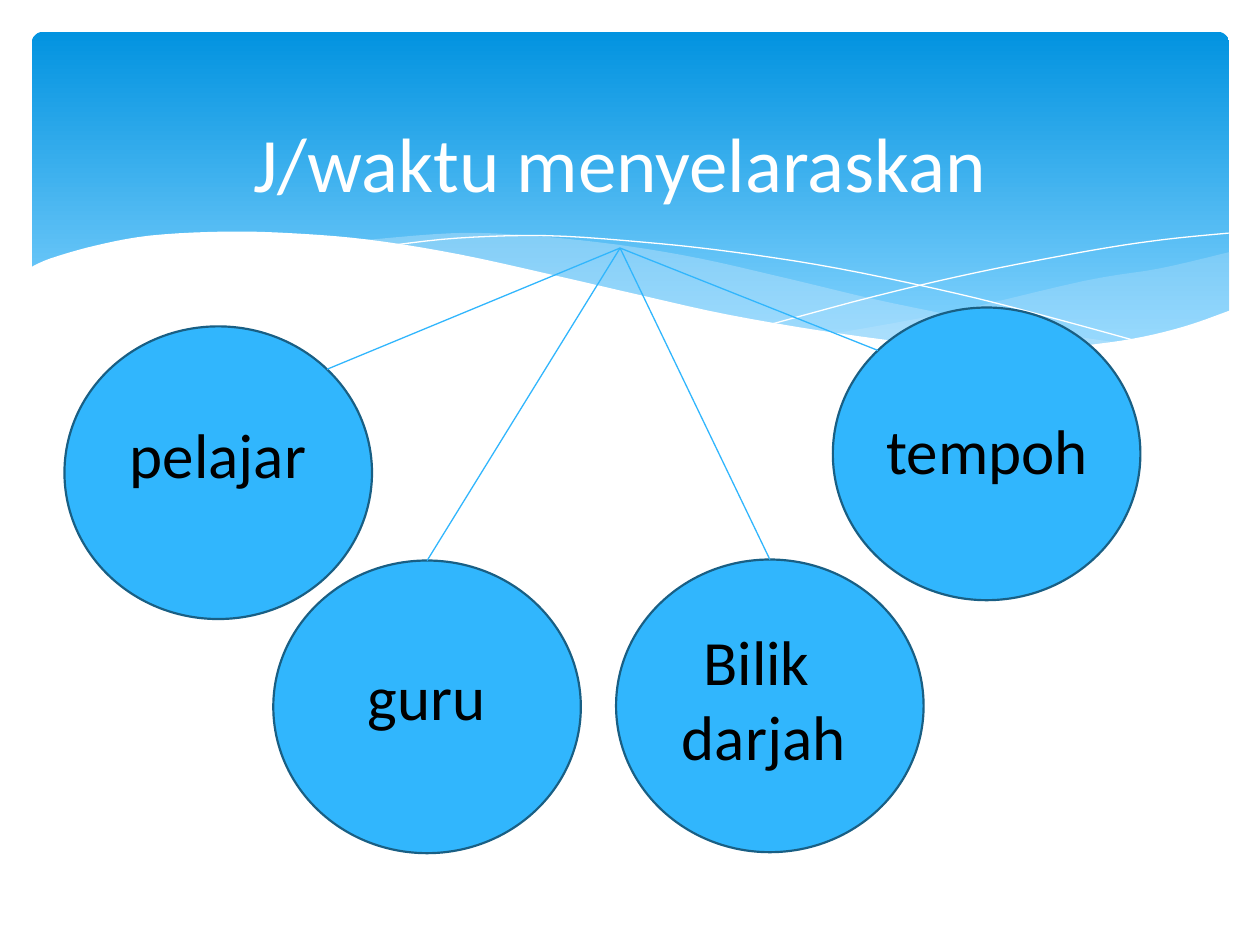
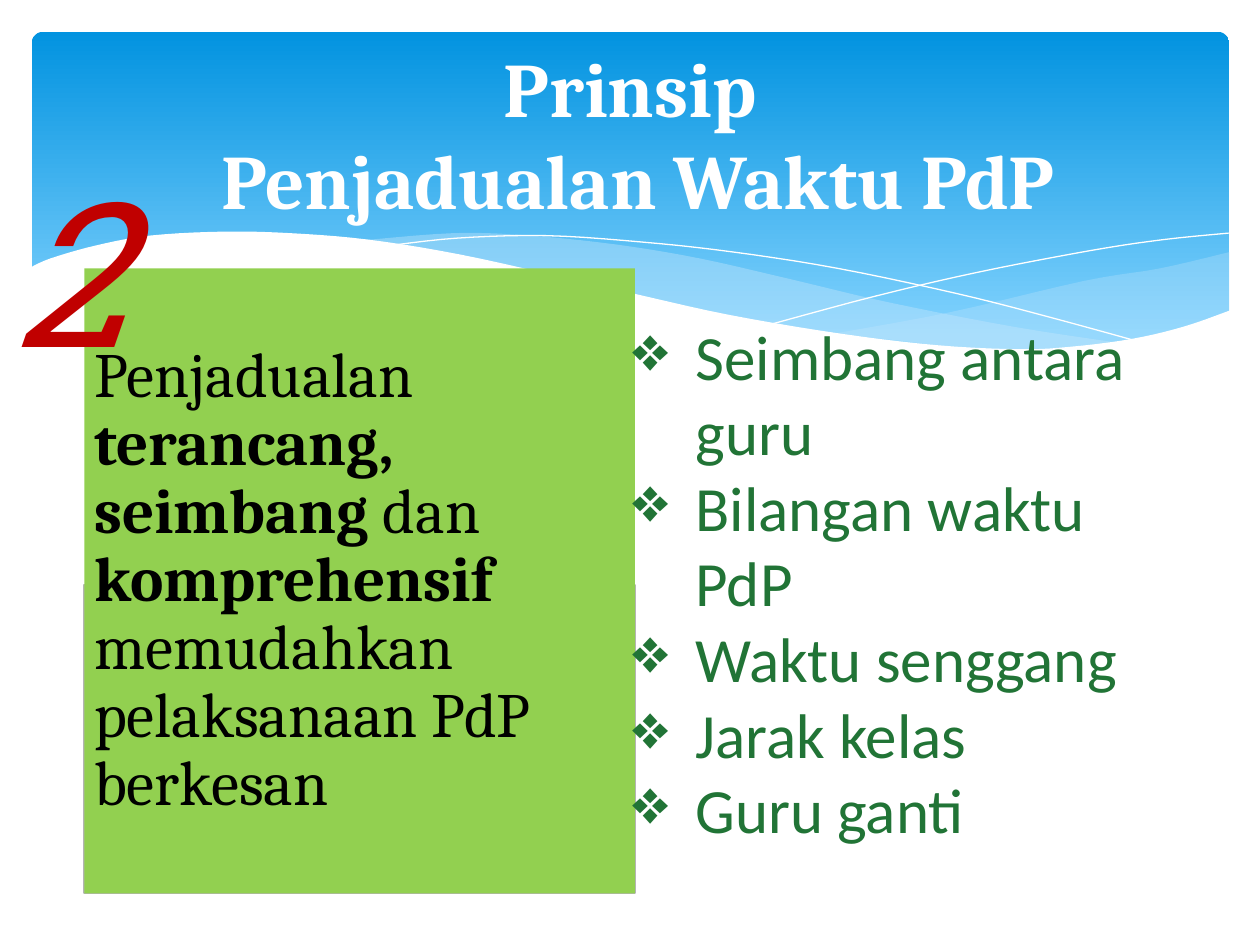
"""Build two slides on aligning and scheduling teaching time."""
import math

from lxml import etree
from pptx import Presentation
from pptx import util as u
from pptx.dml.color import RGBColor
from pptx.enum import shapes, text
from pptx.oxml.ns import qn

COLORS = {
    "white": "FFFFFF", "black": "000000", "band_top": "0293E0", "band_end": "83D3FE",
    "wave": "C6E7FC", "sky": "31B6FD", "navy": "195F84", "lime": "92D050",
    "grey": "B4B4B4", "forest": "217436", "red": "C00000",
}
BACK_WAVE_TOP = [(24.79, 5.08), (23.39, 5.41), (21.87, 5.66), (19.13, 6.3), (16.79, 6.73)]
BACK_WAVE_BASE = [(16.79, 6.73), (18.26, 6.88), (19.53, 7.04), (20.68, 7.06),
                  (21.92, 6.99), (22.99, 6.83), (23.93, 6.58), (24.79, 6.27)]
FRONT_WAVE_TOP = [(22.68, 6.93), (20.5, 6.6), (17.93, 6.1), (15.98, 5.64), (14.1, 5.21),
                  (12.42, 4.93), (10.67, 4.75), (9.17, 4.7), (7.26, 4.85)]
FRONT_WAVE_BASE = [(7.26, 4.85), (9.19, 5.16), (11.4, 5.64), (13.46, 6.1), (15.27, 6.48),
                   (16.89, 6.76), (18.69, 6.99), (20.22, 7.06), (21.54, 7.04), (22.68, 6.93)]
FALLING_LINE = [(7.85, 4.95), (9.22, 4.8), (11, 4.75), (12.95, 4.88), (14.78, 5.08),
                (16.89, 5.41), (19.3, 5.92), (21.11, 6.38), (23.04, 6.91)]
RISING_LINE = [(15.57, 6.53), (17.65, 5.97), (19.71, 5.49), (22, 5.05), (23.47, 4.83),
               (24.77, 4.7)]
WHITE_EDGE = [(24.82, 6.25), (23.88, 6.58), (22.83, 6.83), (21.59, 6.99), (20.55, 7.04),
              (18.9, 6.96), (16.97, 6.73), (14.71, 6.35), (12.78, 5.92), (11.35, 5.59),
              (9.27, 5.13), (7.42, 4.83), (5.84, 4.7), (4.5, 4.67), (3.02, 4.75),
              (1.93, 4.95), (1.02, 5.21), (0.58, 5.41)]
WHITE_BASE = [(0.58, 8.36), (24.82, 8.36)]


def rgb(name):
    """Return the named colour."""
    return RGBColor.from_string(COLORS[name])


def smooth(pts, steps=5):
    """Return a Catmull-Rom curve through the points."""
    ends = [pts[0], *pts, pts[-1]]
    curve = [pts[0]]
    for a, b, c, d in zip(ends, ends[1:], ends[2:], ends[3:]):
        for i in range(1, steps + 1):
            t = i / steps
            curve.append(tuple(
                (2 * q + (r - p) * t + (2 * p - 5 * q + 4 * r - v) * t ** 2
                 + (3 * q - p - 3 * r + v) * t ** 3) / 2
                for p, q, r, v in zip(a, b, c, d)))
    return curve


class Deck:
    """Hold the style and the current slide."""

    def __init__(self):
        """Start an empty 4:3 presentation."""
        self.prs = Presentation()
        self.prs.slide_width, self.prs.slide_height = u.Cm(25.4), u.Cm(19.05)
        self.s = None

    def slide(self):
        """Add a blank slide with the wavy band."""
        self.s = self.prs.slides.add_slide(self.prs.slide_layouts[6])
        band = self.shape("ROUNDED_RECTANGLE", (0.64, 0.64, 24.14, 6.86))
        band.adjustments[0] = 0.034
        band.fill.gradient()
        band.fill.gradient_angle = 270
        for stop, pos, name in zip(band.fill.gradient_stops, (0, 0.9), ("band_top", "band_end")):
            stop.position, stop.color.rgb = pos, rgb(name)
        self.outline(smooth(BACK_WAVE_TOP) + smooth(BACK_WAVE_BASE), "wave", alpha=29)
        self.outline(smooth(FRONT_WAVE_TOP) + smooth(FRONT_WAVE_BASE), "wave", alpha=40)
        for pts in (FALLING_LINE, RISING_LINE):
            self.outline(smooth(pts), line="white", closed=False)
        self.outline(smooth(WHITE_EDGE) + WHITE_BASE, "white")

    def paint(self, sp, fill=None, line=None, width=1.25):
        """Set fill and line and drop the shadow."""
        sp.shadow.inherit = False
        for part, name in ((sp.fill, fill), (sp.line.fill, line)):
            if name:
                part.solid()
                part.fore_color.rgb = rgb(name)
            else:
                part.background()
        if line:
            sp.line.width = u.Pt(width)
        return sp

    def shape(self, kind, box, fill=None, line=None):
        """Add a preset shape."""
        sp = self.s.shapes.add_shape(getattr(shapes.MSO_SHAPE, kind), *map(u.Cm, box))
        return self.paint(sp, fill, line)

    def outline(self, pts, fill=None, line=None, closed=True, alpha=None):
        """Add a freeform through the points."""
        emu = [(u.Cm(x), u.Cm(y)) for x, y in pts]
        fb = self.s.shapes.build_freeform(*emu[0])
        fb.add_line_segments(emu[1:], close=closed)
        sp = self.paint(fb.convert_to_shape(), fill, line, 0)
        if alpha:
            color = sp._element.spPr.find(qn("a:solidFill"))[0]
            etree.SubElement(color, qn("a:alpha"), val=str(alpha * 1000))

    def line(self, start, end):
        """Add a thin straight connector."""
        cx = self.s.shapes.add_connector(
            shapes.MSO_CONNECTOR.STRAIGHT, *map(u.Cm, (*start, *end)))
        cx.line.color.rgb = rgb("sky")
        cx.line.width = u.Pt(0.75)
        etree.SubElement(cx._element.spPr, qn("a:effectLst"))

    def paragraphs(self, sp, paras, size=36, font="Calibri", color="black", align="LEFT",
                   bullet=None, spacing=None, italic=False, **frame):
        """Fill a shape with paragraphs of (text, bold) runs."""
        tf = sp.text_frame
        for key, value in {"word_wrap": True, **frame}.items():
            setattr(tf, key, value)
        for i, runs in enumerate(paras):
            p = tf.add_paragraph() if i else tf.paragraphs[0]
            p.alignment = getattr(text.PP_ALIGN, align)
            if spacing:
                p.line_spacing = spacing
            if bullet:
                self.bullet(p, bullet, color)
            for words, bold in runs:
                if words == "\n":
                    p.add_line_break()
                    continue
                r = p.add_run()
                r.text = words
                look = {"size": u.Pt(size), "name": font, "bold": bold, "italic": italic}
                for key, value in look.items():
                    setattr(r.font, key, value)
                r.font.color.rgb = rgb(color)

    def bullet(self, p, char, color):
        """Give a paragraph a hanging bullet."""
        pPr = p._p.get_or_add_pPr()
        indent = u.Cm(1.27)
        pPr.set("marL", str(indent))
        pPr.set("indent", str(-indent))
        clr = etree.SubElement(pPr, qn("a:buClr"))
        etree.SubElement(clr, qn("a:srgbClr"), val=COLORS[color])
        etree.SubElement(pPr, qn("a:buChar"), char=char)

    def text(self, box, paras, **style):
        """Add a text box."""
        style = {"auto_size": text.MSO_AUTO_SIZE.SHAPE_TO_FIT_TEXT, **style}
        self.paragraphs(self.s.shapes.add_textbox(*map(u.Cm, box)), paras, **style)

    def title(self, left, top, runs, font="Calibri"):
        """Add the white centred title."""
        self.text((left, top, 22.86, 3.48), [runs], size=44, font=font, color="white",
                  align="CENTER", vertical_anchor=text.MSO_ANCHOR.MIDDLE,
                  auto_size=text.MSO_AUTO_SIZE.NONE)


def factors(deck):
    """Build the slide with four factors around a hub."""
    deck.slide()
    deck.title(1.07, 1.52, [("J/waktu menyelaraskan", False)])
    hub, width, height = (12.5, 5), 6.2, 5.9
    for x, y, angle, label, lines in (
            (16.79, 6.2, 135, (17.5, 8.18, 4.8, 1.8), ["tempoh"]),
            (12.42, 11.28, 90, (13.44, 12.42, 3.91, 3.33), ["Bilik ", "darjah"]),
            (5.51, 11.3, 90, (7.09, 13.13, 3.02, 1.8), ["guru"]),
            (1.3, 6.58, 45, (2.31, 8.26, 4.17, 1.8), ["pelajar"])):
        deck.shape("OVAL", (x, y, width, height), "sky", "navy")
        deck.text(label, [[(words, False)] for words in lines], align="CENTER", word_wrap=False)
        turn = math.radians(angle)
        deck.line(hub, (x + width / 2 * (1 + math.cos(turn)),
                        y + height / 2 * (1 - math.sin(turn))))


def principle(deck):
    """Build the slide with the second scheduling principle."""
    deck.slide()
    deck.title(1.27, 0.94, [("Prinsip", True), ("\n", True), (" Penjadualan Waktu PdP", True)],
               "Cambria")
    deck.shape("RECTANGLE", (1.7, 11.79, 11.1, 6.22), "lime", "grey")
    panel = deck.shape("RECTANGLE", (1.7, 5.41, 11.1, 12.6), "lime")
    margins = dict.fromkeys(
        ("margin_left", "margin_top", "margin_right", "margin_bottom"), u.Cm(0.2))
    deck.paragraphs(panel, [[("Penjadualan ", False), ("terancang, seimbang ", True),
                             ("dan ", False), ("komprehensif ", True),
                             ("memudahkan pelaksanaan PdP berkesan", False)]],
                    font="Cambria", spacing=0.9, vertical_anchor=text.MSO_ANCHOR.MIDDLE,
                    **margins)
    points = ["Seimbang antara guru", "Bilangan waktu PdP", "Waktu senggang",
              "Jarak kelas", "Guru ganti"]
    deck.text((12.5, 6.27, 10.8, 14.1), [[(words, False)] for words in points],
              color="forest", bullet="❖")
    deck.text((0, 2.82, 1.07, 5.18), [[("2", False)]], size=115, font="Roboto Slab",
              color="red", italic=True)


def main():
    """Build and save the presentation."""
    deck = Deck()
    factors(deck)
    principle(deck)
    deck.prs.save("out.pptx")


if __name__ == "__main__":
    main()
